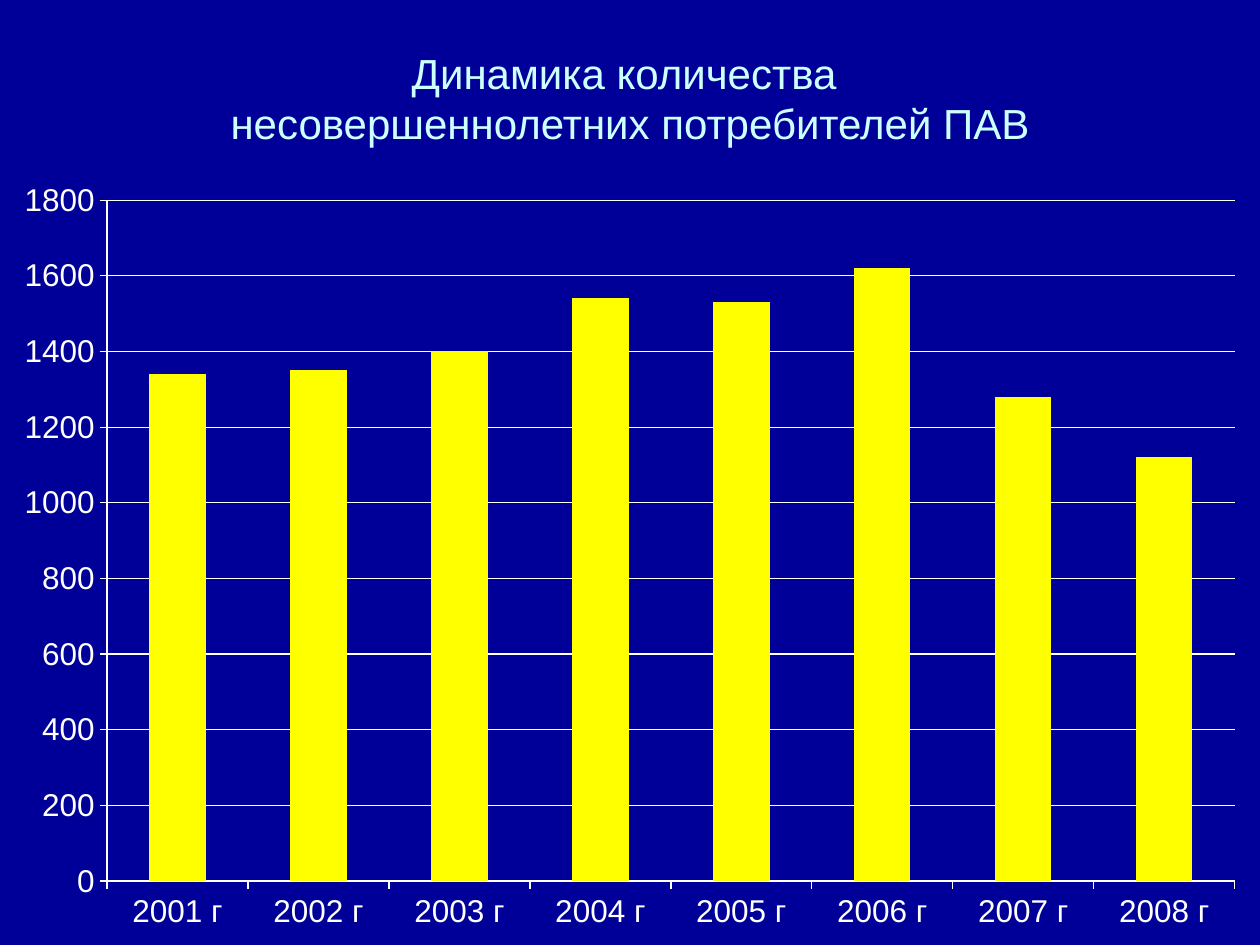
from lxml.etree import SubElement
from pptx import Presentation
from pptx.chart.data import CategoryChartData
from pptx.dml.color import RGBColor
from pptx.enum.chart import XL_CHART_TYPE, XL_TICK_MARK
from pptx.enum.text import MSO_ANCHOR, PP_ALIGN
from pptx.oxml.ns import qn
from pptx.util import Pt

PX = 9144  # EMU per px, 100 px to the inch
NAVY = RGBColor(0x00, 0x00, 0x99)
PALE_CYAN = RGBColor(0xCC, 0xFF, 0xFF)
WHITE = RGBColor(0xFF, 0xFF, 0xFF)
YELLOW = RGBColor(0xFF, 0xFF, 0x00)
FONT = "Arial"

TITLE = "Динамика количества \vнесовершеннолетних потребителей ПАВ"
YEARS = range(2001, 2009)
CONSUMERS = (1340, 1350, 1400, 1540, 1530, 1620, 1280, 1120)


def box(*lengths):
    return [length * PX for length in lengths]


def format_font(font, size, color):
    font.name = FONT
    font.size = Pt(size)
    font.bold = False
    font.color.rgb = color


def write_text(shape, text, size=18, color=WHITE, align=PP_ALIGN.LEFT,
               anchor=MSO_ANCHOR.TOP):
    frame = shape.text_frame
    frame.word_wrap = True
    frame.vertical_anchor = anchor
    paragraph = frame.paragraphs[0]
    paragraph.text = text
    paragraph.alignment = align
    for run in paragraph.runs:
        format_font(run.font, size, color)


def add_title(slide):
    title = slide.shapes.title
    title.left, title.top, title.width, title.height = box(50, 30, 900, 95)
    write_text(title, TITLE, size=24, color=PALE_CYAN,
               align=PP_ALIGN.CENTER, anchor=MSO_ANCHOR.MIDDLE)


def format_line(line):
    line.color.rgb = WHITE
    line.width = Pt(0.75)


def format_axis(axis):
    axis.major_tick_mark = XL_TICK_MARK.OUTSIDE
    axis.minor_tick_mark = XL_TICK_MARK.NONE
    format_line(axis.format.line)


def place_plot_area(chart, **fractions):
    """Fix the inner plot area as fractions of the chart frame."""
    plot_area = chart.plots[0]._element.getparent()
    layout = plot_area.find(qn("c:layout"))
    if layout is None:
        layout = SubElement(plot_area, qn("c:layout"))
        plot_area.insert(0, layout)
    manual = SubElement(layout, qn("c:manualLayout"))
    settings = {"layoutTarget": "inner", "xMode": "edge", "yMode": "edge", **fractions}
    for name, value in settings.items():
        SubElement(manual, qn(f"c:{name}")).set("val", str(value))


def add_consumers_chart(slide):
    data = CategoryChartData()
    data.categories = [f"{year} г" for year in YEARS]
    data.add_series("Series 1", CONSUMERS)
    chart = slide.shapes.add_chart(
        XL_CHART_TYPE.COLUMN_CLUSTERED, *box(0, 133, 1000, 617), data).chart
    chart.has_legend = False
    chart.has_title = False
    format_font(chart.font, 18, WHITE)

    columns = chart.plots[0]
    columns.gap_width = 150
    columns.vary_by_categories = False
    fill = columns.series[0].format.fill
    fill.solid()
    fill.fore_color.rgb = YELLOW

    format_axis(chart.category_axis)
    counts = chart.value_axis
    format_axis(counts)
    counts.minimum_scale, counts.maximum_scale, counts.major_unit = 0, 1800, 200
    counts.has_major_gridlines = True
    format_line(counts.major_gridlines.format.line)
    place_plot_area(chart, x=0.085, y=0.042, w=0.895, h=0.876)


def main():
    presentation = Presentation()
    presentation.slide_width, presentation.slide_height = box(1000, 750)
    slide = presentation.slides.add_slide(presentation.slide_layouts[5])
    background = slide.background.fill
    background.solid()
    background.fore_color.rgb = NAVY
    add_title(slide)
    add_consumers_chart(slide)
    presentation.save("out.pptx")


if __name__ == "__main__":
    main()
